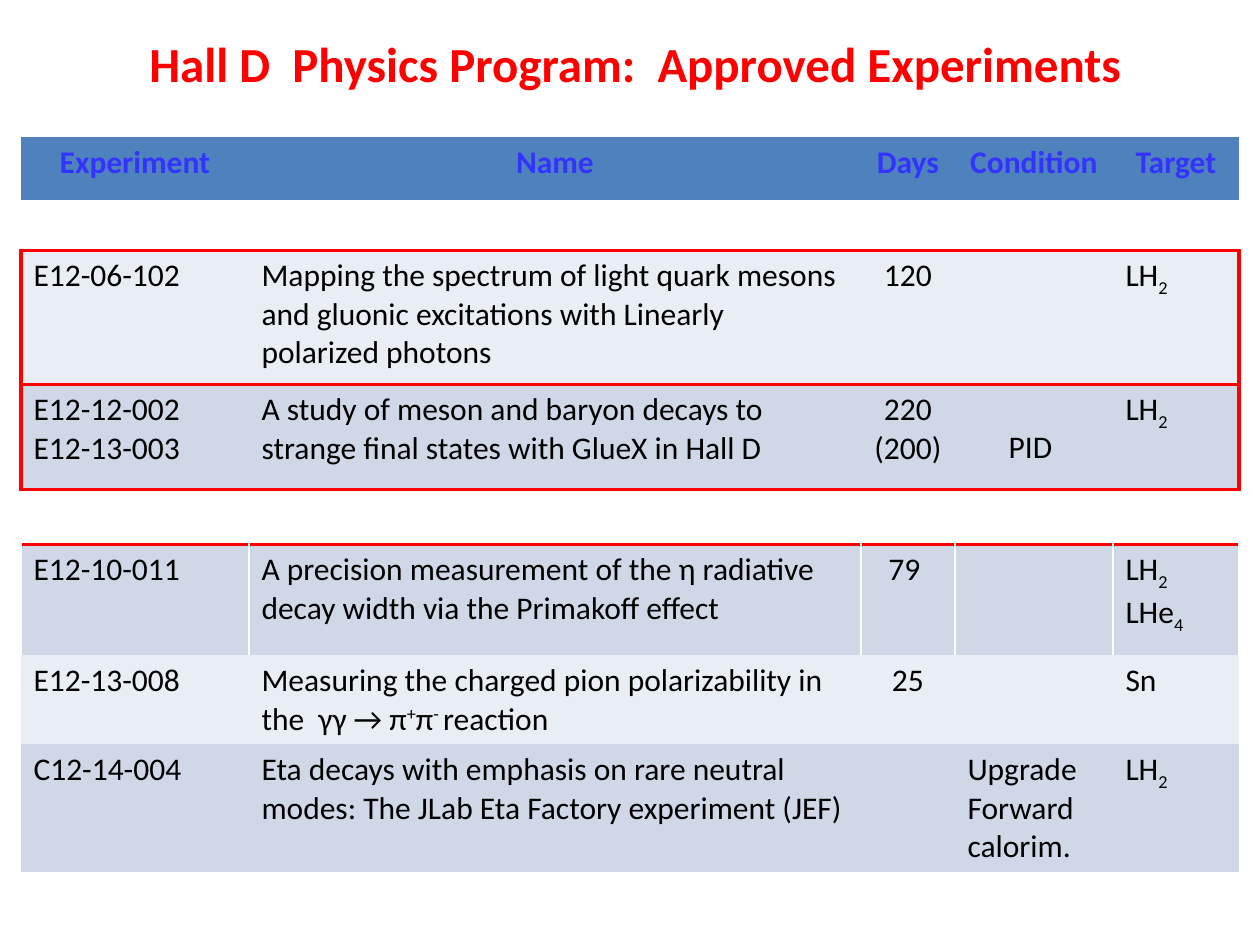
from lxml.etree import SubElement
from pptx import Presentation
from pptx.dml.color import RGBColor
from pptx.enum.text import MSO_ANCHOR, PP_ALIGN
from pptx.oxml.ns import qn
from pptx.util import Pt

# Content: "|" splits runs, "_" marks a subscript, "^" a superscript
TITLE = "Hall D  Physics Program:  Approved Experiments "
HEAD = ("Experiment", "Name", "Days", "Condition", "Target")
GAP = ("",) * 5
ROWS = [  # height, fill, cells
    (63, "head", HEAD),
    (50, None, GAP),
    (134, "light", (
        "E12-06-102",
        "Mapping the spectrum of light quark mesons and gluonic excitations "
        "with Linearly polarized photons",
        "120", "", "LH|_2")),
    (105, "dark", (
        "E12-12-002\nE12-13-003",
        "A study of meson and baryon decays to strange final states "
        "with GlueX in Hall D",
        "220\n(200)", "PID ", "LH|_2")),
    (55, None, GAP),
    (111, "dark", (
        "E12-10-011",
        "A precision measurement of the η radiative decay width "
        "via the Primakoff effect",
        "79 ", "", "LH|_2\nLHe|_4")),
    (89, "light", (
        "E12-13-008",
        "Measuring the charged pion polarizability in the  γγ → π|^+|π|^- |reaction",
        "25", "", "Sn")),
    (128, "dark", (
        "C12-14-004",
        "Eta decays with emphasis on rare neutral modes: "
        "The JLab Eta Factory experiment (JEF)",
        "", "Upgrade\nForward\ncalorim.", "LH|_2")),
]
COLS = (228, 612, 94, 158, 126)
LEFT, TOP = 21, 137
BOX = (2, 3)     # rows inside the red frame
RULED = 5        # row with white rules between cells
DAYS, COND = 2, 3
PID = (3, COND)  # sits on the second line of its row

THEME = {
    "font": "Calibri", "title": 28, "body": 18,
    "red": "FF0000", "blue": "3333FF", "black": "000000", "white": "FFFFFF",
    "head": "4F81BD", "light": "E9EDF4", "dark": "D0D8E8",
}
PLAIN = "{2D5ABB26-0587-4C30-8999-92F81FD0307C}"  # no style, no grid
SHIFT = {"_": "-25000", "^": "30000"}


def px(n):
    return round(n * 914400 / 126)


def tint(name):
    return RGBColor.from_string(THEME[name])


def write(frame, text, align, size, color, bold):
    form = {"name": THEME["font"], "size": Pt(THEME[size]), "bold": bold}
    for i, line in enumerate(text.split("\n")):
        para = frame.paragraphs[0] if i == 0 else frame.add_paragraph()
        para.alignment = align
        for part in line.split("|"):
            base = SHIFT.get(part[:1])
            run = para.add_run()
            run.text = part[1:] if base else part
            for key, val in form.items():
                setattr(run.font, key, val)
            run.font.color.rgb = tint(color)
            if base:
                run.font._element.set("baseline", base)


def edges(r, c):
    """Sides of a cell that carry a line, in schema order."""
    if r == RULED:
        return {"L": ("white", 1), "R": ("white", 1)}
    red = ("red", 2.25)
    tests = {
        "L": r in BOX and c == 0,
        "R": r in BOX and c == len(COLS) - 1,
        "T": r in (BOX[0], BOX[-1] + 1),
        "B": r in (BOX[0] - 1, BOX[-1]),
    }
    return {side: red for side, on in tests.items() if on}


def rule(cell, side, color, width):
    line = SubElement(cell._tc.get_or_add_tcPr(), qn("a:ln" + side), w=str(Pt(width)))
    fill = SubElement(line, qn("a:solidFill"))
    SubElement(fill, qn("a:srgbClr"), val=THEME[color])


def place(r, c):
    if r == 0 or c == DAYS or (r, c) == PID:
        return PP_ALIGN.CENTER
    return PP_ALIGN.LEFT


def main():
    deck = Presentation()
    deck.slide_width, deck.slide_height = px(1260), px(945)
    slide = deck.slides.add_slide(deck.slide_layouts[6])

    # Title
    frame = slide.shapes.add_textbox(px(105), px(21), px(1071), px(84)).text_frame
    frame.word_wrap = True
    frame.vertical_anchor = MSO_ANCHOR.MIDDLE
    write(frame, TITLE, PP_ALIGN.CENTER, "title", "red", True)

    # Table grid
    high = sum(row[0] for row in ROWS)
    table = slide.shapes.add_table(
        len(ROWS), len(COLS), px(LEFT), px(TOP), px(sum(COLS)), px(high)).table
    table.first_row = table.horz_banding = False
    table._tbl.tblPr.find(qn("a:tableStyleId")).text = PLAIN
    for col, wide in zip(table.columns, COLS):
        col.width = px(wide)

    # Cells
    for r, (tall, fill, texts) in enumerate(ROWS):
        table.rows[r].height = px(tall)
        for c, text in enumerate(texts):
            cell = table.cell(r, c)
            for side, (color, width) in edges(r, c).items():
                rule(cell, side, color, width)
            if fill:
                cell.fill.solid()
                cell.fill.fore_color.rgb = tint(fill)
            else:
                cell.fill.background()
            if (r, c) == PID:
                cell.margin_top = px(44)
            if text:
                write(cell.text_frame, text, place(r, c), "body",
                      "black" if r else "blue", r == 0)

    deck.save("out.pptx")


if __name__ == "__main__":
    main()
